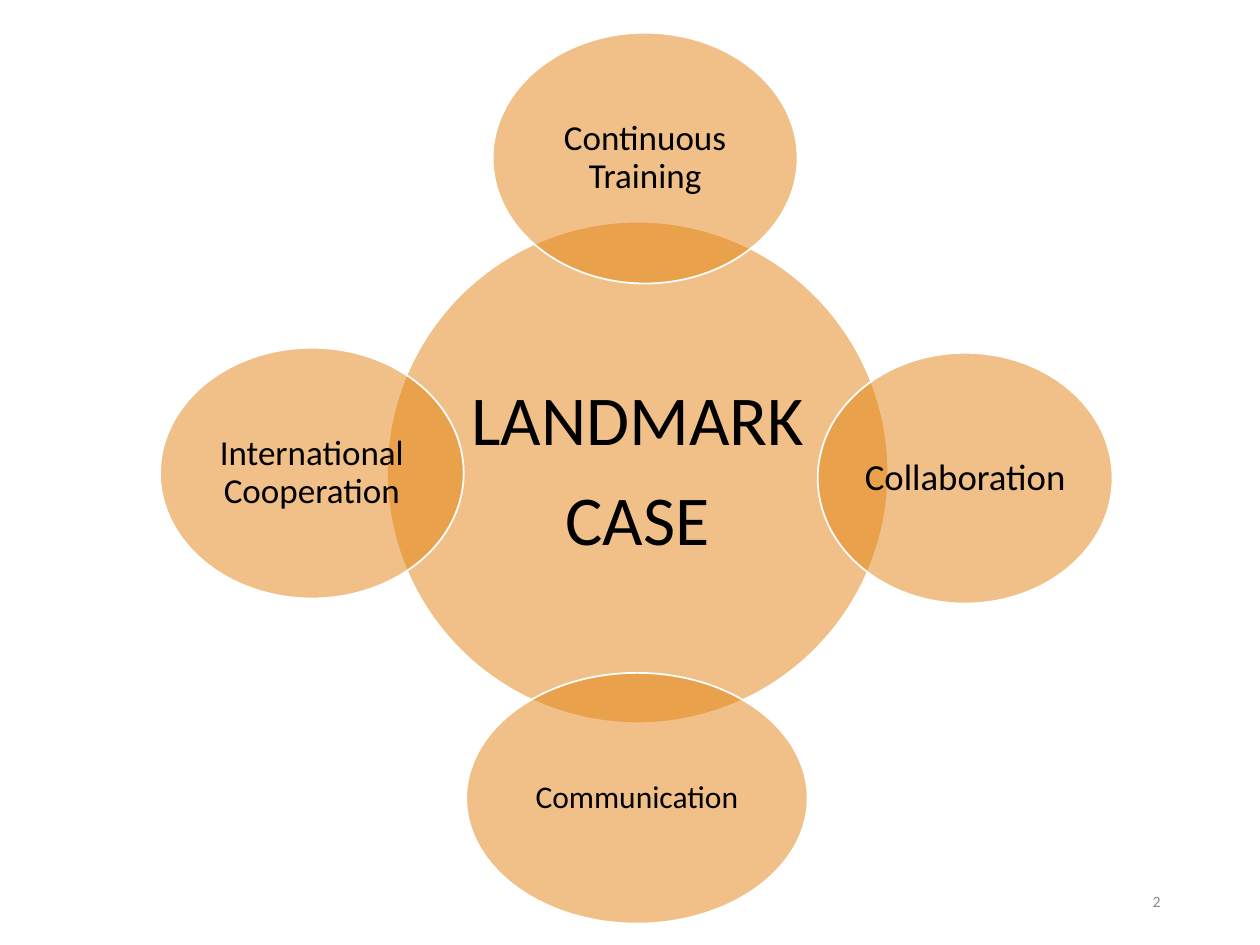
"""Build a slide with four overlapping circles around a landmark case."""
from lxml.etree import SubElement
from pptx import Presentation
from pptx.dml.color import RGBColor
from pptx.enum.shapes import MSO_SHAPE
from pptx.enum.text import MSO_ANCHOR as Anchor, PP_ALIGN as Align
from pptx.oxml.ns import qn
from pptx.util import Inches, Pt

COLORS = {"circle": "E48312", "outline": "FFFFFF", "text": "000000", "number": "8C8C8C"}
MARGINS = ("margin_left", "margin_top", "margin_right", "margin_bottom")


def write_text(shape, lines, size, color, paragraph_format):
    frame = shape.text_frame
    frame.word_wrap = True
    frame.vertical_anchor = Anchor.MIDDLE
    frame.text = "\n".join(lines)
    for paragraph in frame.paragraphs:
        for name, value in paragraph_format.items():
            setattr(paragraph, name, value)
        font = paragraph.runs[0].font
        for name, value in {"name": "Calibri", "size": Pt(size)}.items():
            setattr(font, name, value)
        font.color.rgb = RGBColor.from_string(COLORS[color])


presentation = Presentation()
presentation.slide_width = Inches(10)
presentation.slide_height = Inches(7.5)
slide = presentation.slides.add_slide(presentation.slide_layouts[6])

circles = [
    (["LANDMARK", "CASE"], 40, 3.07, 1.76, 3.98, 3.98, 0.06),
    (["Continuous Training"], 20, 3.91, 0.26, 2.42, 1.99, 0.03),
    (["Collaboration"], 21, 6.49, 2.8, 2.34, 1.99, 0.03),
    (["Communication"], 18, 3.7, 5.34, 2.71, 1.99, 0.03),
    (["International Cooperation"], 20, 1.27, 2.76, 2.41, 1.99, 0.03),
]
for lines, size, left, top, width, height, margin in circles:
    circle = slide.shapes.add_shape(
        MSO_SHAPE.OVAL, Inches(left), Inches(top), Inches(width), Inches(height)
    )
    circle.shadow.inherit = False
    circle.fill.solid()
    circle.fill.fore_color.rgb = RGBColor.from_string(COLORS["circle"])
    fill_color = circle.fill._xPr.find(qn("a:solidFill"))[0]
    SubElement(fill_color, qn("a:alpha"), val="50000")
    circle.line.color.rgb = RGBColor.from_string(COLORS["outline"])
    circle.line.width = Pt(1)
    for side in MARGINS:
        setattr(circle.text_frame, side, Inches(margin))
    spacing = {
        "alignment": Align.CENTER,
        "line_spacing": 0.9,
        "space_after": Pt(round(size * 0.35)),
    }
    write_text(circle, lines, size, "text", spacing)

slide_number = slide.shapes.add_textbox(Inches(7.06), Inches(6.95), Inches(2.25), Inches(0.4))
write_text(slide_number, ["2"], 9, "number", {"alignment": Align.RIGHT})

presentation.save("out.pptx")
